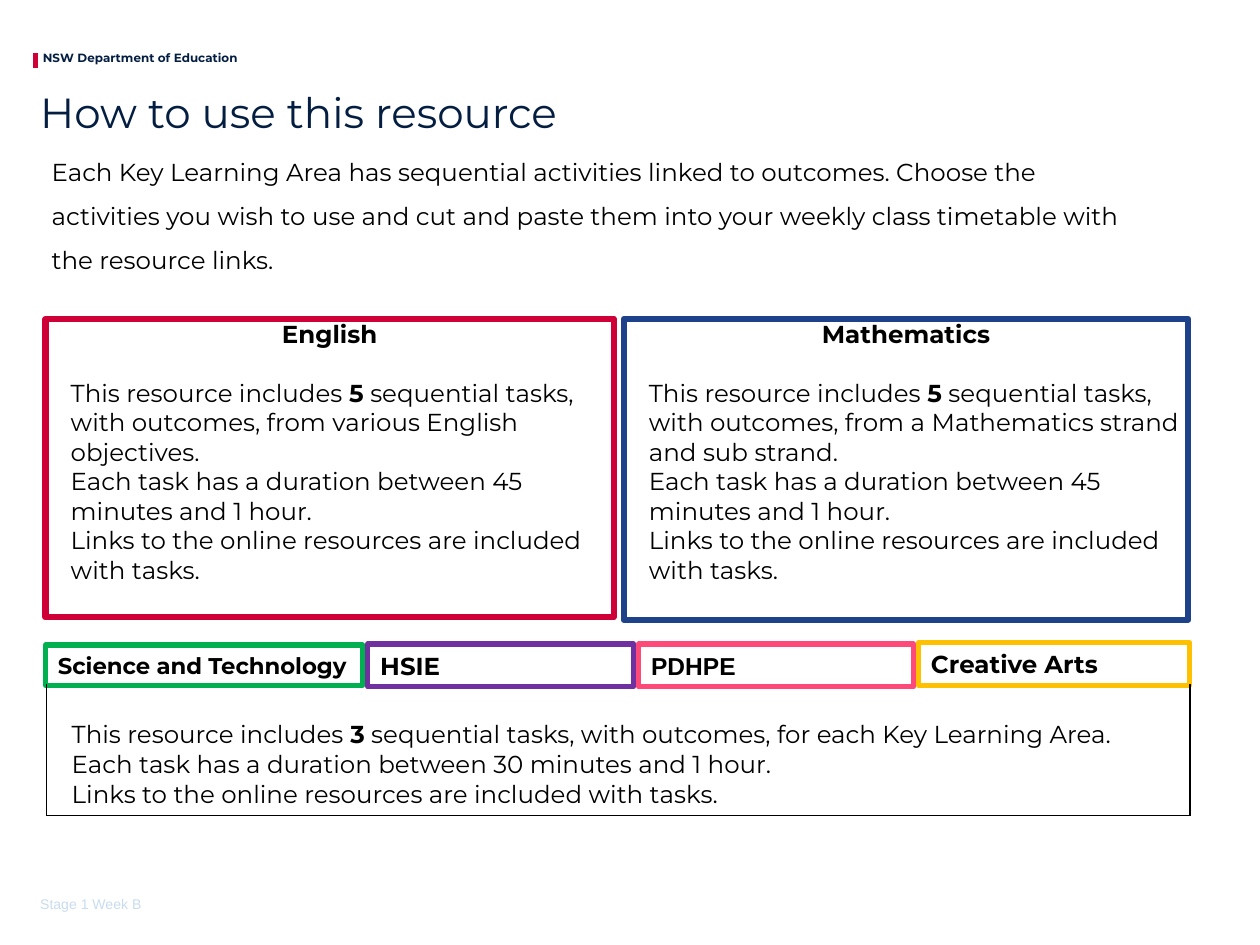
import pptx
import pptx.dml.color
import pptx.enum.shapes
import pptx.enum.text
import pptx.oxml
import pptx.oxml.ns
import pptx.util

Pt = pptx.util.Pt
RGBColor = pptx.dml.color.RGBColor
Align = pptx.enum.text.PP_ALIGN
Anchor = pptx.enum.text.MSO_ANCHOR

NAVY = RGBColor(0x04, 0x1E, 0x42)
RED = RGBColor(0xCE, 0x00, 0x37)
BLUE = RGBColor(0x1D, 0x42, 0x8A)
GREEN = RGBColor(0x00, 0xB0, 0x50)
PURPLE = RGBColor(0x70, 0x30, 0xA0)
PINK = RGBColor(0xFF, 0x49, 0x79)
AMBER = RGBColor(0xFF, 0xC0, 0x00)
PALE_BLUE = RGBColor(0xC8, 0xDC, 0xF0)
BLACK = RGBColor(0, 0, 0)

LINKS = "Links to the online resources are included with tasks."
LINE_HEIGHT = 17


def duration(shortest):
    return f"Each task has a duration between {shortest} minutes and 1 hour."


def tasks(count, ending):
    """Runs of the opening sentence, with the count in bold."""
    return [("This resource includes ", False), (count, True),
            (f" sequential tasks, with outcomes, {ending}", False)]


class SlideBuilder:
    """Holds the text style and the current slide."""

    def __init__(self, slide, font="Montserrat", size=14):
        self.slide = slide
        self.font = font
        self.size = size

    def paragraph(self, frame, content, first=False, indent=0, font=None, **formats):
        """Write one paragraph; content is a string or a list of (text, bold)."""
        paragraph = frame.paragraphs[0] if first else frame.add_paragraph()
        if indent:
            paragraph._p.get_or_add_pPr().set("marL", str(Pt(indent)))
        settings = {"alignment": Align.LEFT, "space_before": Pt(0), **formats}
        for name, value in settings.items():
            setattr(paragraph, name, value)
        font = {"name": self.font, "size": Pt(self.size), "bold": False,
                "color": BLACK, **(font or {})}
        color = font.pop("color")
        runs = [(content, font["bold"])] if isinstance(content, str) else content
        for text, bold in runs:
            run = paragraph.add_run()
            run.text = text
            for name, value in {**font, "bold": bold}.items():
                setattr(run.font, name, value)
            run.font.color.rgb = color

    def frame(self, shape, margins=(0, 0, 0, 0), anchor=Anchor.TOP):
        frame = shape.text_frame
        sides = ("margin_left", "margin_top", "margin_right", "margin_bottom")
        settings = dict(zip(sides, map(Pt, margins)))
        settings.update(word_wrap=True, vertical_anchor=anchor)
        for name, value in settings.items():
            setattr(frame, name, value)
        return frame

    def title(self, box, text, **font):
        title = self.slide.shapes.title
        for name, value in zip(("left", "top", "width", "height"), box):
            setattr(title, name, Pt(value))
        self.paragraph(self.frame(title, anchor=Anchor.MIDDLE), text, first=True,
                       line_spacing=0.9, font=font)

    def text(self, box, text, margins=(0, 0, 0, 0), anchor=Anchor.TOP,
             line_spacing=1.0, **font):
        shape = self.slide.shapes.add_textbox(*map(Pt, box))
        self.paragraph(self.frame(shape, margins, anchor), text, first=True,
                       line_spacing=line_spacing, font=font)

    def outline(self, box, color, width):
        shape = self.slide.shapes.add_shape(
            pptx.enum.shapes.MSO_SHAPE.RECTANGLE, *map(Pt, box))
        shape.shadow.inherit = False
        shape.fill.background()
        shape.line.color.rgb = color
        shape.line.width = Pt(width)
        return shape

    def panel(self, box, color, heading, lines):
        frame = self.frame(self.outline(box, color, 3.5))
        self.paragraph(frame, heading, first=True, alignment=Align.CENTER,
                       space_after=Pt(LINE_HEIGHT), font={"bold": True})
        for line in lines:
            self.paragraph(frame, line, indent=14.4)

    def label(self, box, color, text, **font):
        frame = self.frame(self.outline(box, color, 3), (7.2, 3.6, 7.2, 3.6),
                           Anchor.MIDDLE)
        self.paragraph(frame, text, first=True, font={"bold": True, **font})

    def line(self, start, end, color, width):
        line = self.slide.shapes.add_connector(
            pptx.enum.shapes.MSO_CONNECTOR.STRAIGHT, *map(Pt, start + end))
        line.line.color.rgb = color
        line.line.width = Pt(width)
        line._element.spPr.append(pptx.oxml.parse_xml(
            f'<a:effectLst {pptx.oxml.ns.nsdecls("a")}/>'))

    def table(self, box, lines):
        """One cell, bordered on all sides but the top."""
        table = self.slide.shapes.add_table(1, 1, *map(Pt, box)).table
        table.first_row = table.horz_banding = False
        cell = table.cell(0, 0)
        margins = {"margin_left": 7.2, "margin_right": 7.2,
                   "margin_top": 3.6 + LINE_HEIGHT, "margin_bottom": 2}
        for name, value in margins.items():
            setattr(cell, name, Pt(value))
        for index, line in enumerate(lines):
            self.paragraph(cell.text_frame, line, first=index == 0, indent=7.2)
        properties = cell._tc.get_or_add_tcPr()
        solid = f'<a:solidFill><a:srgbClr val="{BLACK}"/></a:solidFill>'
        for side in "LRTB":
            fill = "<a:noFill/>" if side == "T" else solid
            properties.append(pptx.oxml.parse_xml(
                f'<a:ln{side} {pptx.oxml.ns.nsdecls("a")} w="{Pt(1)}">{fill}</a:ln{side}>'))
        cell.fill.background()


def main():
    presentation = pptx.Presentation()
    presentation.slide_width, presentation.slide_height = Pt(720), Pt(540)
    builder = SlideBuilder(
        presentation.slides.add_slide(presentation.slide_layouts[5]))

    # Header, title and introduction
    builder.line((20.2, 30.2), (20.2, 38.9), RED, 2.5)
    builder.text((24.5, 28.8, 146, 8), "NSW Department of Education",
                 size=Pt(6.8), color=NAVY, bold=True)
    builder.title((23, 46, 679, 39.6), "How to use this resource",
                  size=Pt(24), color=NAVY)
    builder.text((29.5, 77.8, 635, 94.3),
                 "Each Key Learning Area has sequential activities linked to "
                 "outcomes. Choose the activities you wish to use and cut and "
                 "paste them into your weekly class timetable with the resource "
                 "links.", margins=(0, 3.6, 7.2, 3.6), line_spacing=1.5)

    # Main subject panels
    panels = [
        ((26, 182.2, 324.7, 170.6), RED, "English",
         "from various English objectives."),
        ((356.4, 182.2, 322.6, 172), BLUE, "Mathematics",
         "from a Mathematics strand and sub strand."),
    ]
    for box, color, heading, ending in panels:
        builder.panel(box, color, heading, [tasks("5", ending), duration(45), LINKS])

    # Other subjects: labels above a shared table
    labels = [
        ((26, 368.6, 181.4, 23), GREEN, "Science and Technology", {"size": Pt(13)}),
        ((210.2, 368, 152, 24.5), PURPLE, "HSIE", {}),
        ((365, 368, 157, 24.5), PINK, "PDHPE", {"name": "Arial"}),
        ((524.9, 367.2, 154.8, 24.5), AMBER, "Creative Arts", {}),
    ]
    for box, color, text, font in labels:
        builder.label(box, color, text, **font)
    builder.table((26.6, 391, 653.4, 74.9),
                  [tasks("3", "for each Key Learning Area."), duration(30), LINKS])

    # Footer
    builder.text((23, 492.5, 69, 28.8), "Stage 1 Week B", anchor=Anchor.BOTTOM,
                 name="Arial", size=Pt(8), color=PALE_BLUE)

    presentation.save("out.pptx")


if __name__ == "__main__":
    main()
